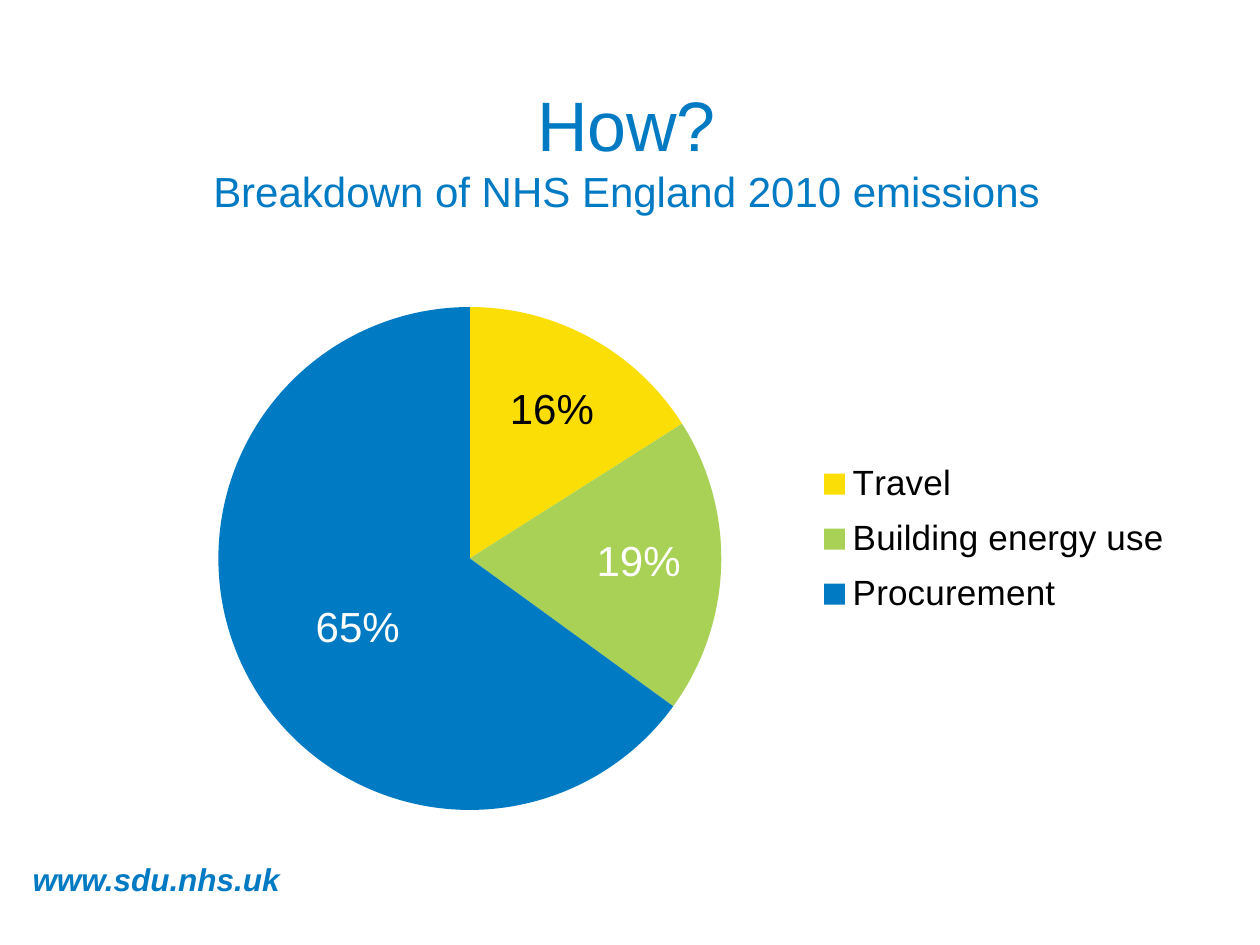
from lxml import etree
from pptx import Presentation
from pptx.chart.data import CategoryChartData
from pptx.dml.color import RGBColor
from pptx.enum.chart import XL_CHART_TYPE, XL_LABEL_POSITION, XL_LEGEND_POSITION
from pptx.enum.text import MSO_ANCHOR, PP_ALIGN
from pptx.oxml import parse_xml
from pptx.oxml.ns import nsdecls, qn
from pptx.util import Cm, Pt

PIE = XL_CHART_TYPE.PIE
CENTRE_LABEL = XL_LABEL_POSITION.CENTER
RIGHT = XL_LEGEND_POSITION.RIGHT
MIDDLE = MSO_ANCHOR.MIDDLE
CENTER = PP_ALIGN.CENTER

FONT = "Arial"
BLUE = RGBColor(0x00, 0x7A, 0xC3)
GREEN = RGBColor(0xA9, 0xD1, 0x56)
YELLOW = RGBColor(0xFB, 0xDE, 0x06)
BLACK = RGBColor(0x00, 0x00, 0x00)
WHITE = RGBColor(0xFF, 0xFF, 0xFF)

SLICES = [
    ("Travel", 16, YELLOW, BLACK, (0.02, -0.06)),
    ("Building energy use", 19, GREEN, WHITE, (0.04, 0)),
    ("Procurement", 65, BLUE, WHITE, (0, 0.02)),
]


def style_font(font, size, color):
    """Set the typeface, size and colour of a font."""
    font.name = FONT
    font.size = Pt(size)
    font.color.rgb = color


def add_text_box(s, left, top, width, height, wrap=True):
    """Add a centred text box and return its paragraph."""
    tf = s.shapes.add_textbox(Cm(left), Cm(top), Cm(width), Cm(height)).text_frame
    tf.word_wrap = wrap
    tf.vertical_anchor = MIDDLE
    p = tf.paragraphs[0]
    p.alignment = CENTER
    return p


def add_run(p, text, size):
    """Append a blue run to a paragraph and return it."""
    r = p.add_run()
    r.text = text
    style_font(r.font, size, BLUE)
    return r


def make_layout(**values):
    """Build a manual chart layout from its named values."""
    layout = parse_xml(f"<c:layout {nsdecls('c')}><c:manualLayout/></c:layout>")
    for name, value in values.items():
        etree.SubElement(layout[0], qn(f"c:{name}")).set("val", str(value))
    return layout


def style_slice(series, index, color, label_color, offset):
    """Colour one slice and place its percentage label."""
    point = series.points[index]
    point.format.fill.solid()
    point.format.fill.fore_color.rgb = color
    point.format.line.fill.background()
    label = point.data_label
    style_font(label.font, 24, label_color)
    label.position = CENTRE_LABEL
    element = series.data_labels._element.findall(qn("c:dLbl"))[index]
    element.find(qn("c:showVal")).set("val", "0")
    element.find(qn("c:showPercent")).set("val", "1")
    x, y = offset
    element.find(qn("c:idx")).addnext(make_layout(x=x, y=y))


def add_legend(chart):
    """Add the legend to the right of the pie."""
    chart.has_legend = True
    legend = chart.legend
    legend.position = RIGHT
    legend.include_in_layout = False
    style_font(legend.font, 20, BLACK)
    for layout in legend._element.findall(qn("c:layout")):
        legend._element.remove(layout)
    legend._element.find(qn("c:legendPos")).addnext(
        make_layout(xMode="edge", yMode="edge", x=0.64, y=0.36, w=0.34, h=0.28))


def add_pie(s):
    """Add the emissions pie chart."""
    data = CategoryChartData()
    data.categories = [item[0] for item in SLICES]
    data.add_series("Series 1", [item[1] for item in SLICES])
    chart = s.shapes.add_chart(PIE, Cm(2.39), Cm(4.37), Cm(21.79), Cm(13), data).chart
    chart.has_title = False
    style_font(chart.font, 18, BLACK)
    series = chart.plots[0].series[0]
    labels = series.data_labels
    labels.show_value = False
    labels.show_percentage = True
    labels.number_format = "0%"
    labels.number_format_is_linked = False
    style_font(labels.font, 24, WHITE)
    for index, (_, _, color, label_color, offset) in enumerate(SLICES):
        style_slice(series, index, color, label_color, offset)
    area = chart._chartSpace.chart.plotArea
    for layout in area.findall(qn("c:layout")):
        area.remove(layout)
    area.insert(0, make_layout(layoutTarget="inner", xMode="edge", yMode="edge",
                               x=0.09, y=0.14, w=0.47, h=0.78))
    add_legend(chart)


def main():
    """Build and save the slide."""
    prs = Presentation()
    prs.slide_width, prs.slide_height = Cm(25.4), Cm(19.05)
    s = prs.slides.add_slide(prs.slide_layouts[6])

    r = add_run(add_text_box(s, 0.3, 17.32, 5.7, 0.8, wrap=False), "www.sdu.nhs.uk", 18)
    r.font.bold = r.font.italic = True

    add_pie(s)

    p = add_text_box(s, 1.2, 1.4, 22.86, 3.18)
    add_run(p, "How?", 40)
    p.add_line_break()
    add_run(p, "Breakdown of NHS England 2010 emissions", 24)

    prs.save("out.pptx")


if __name__ == "__main__":
    main()
